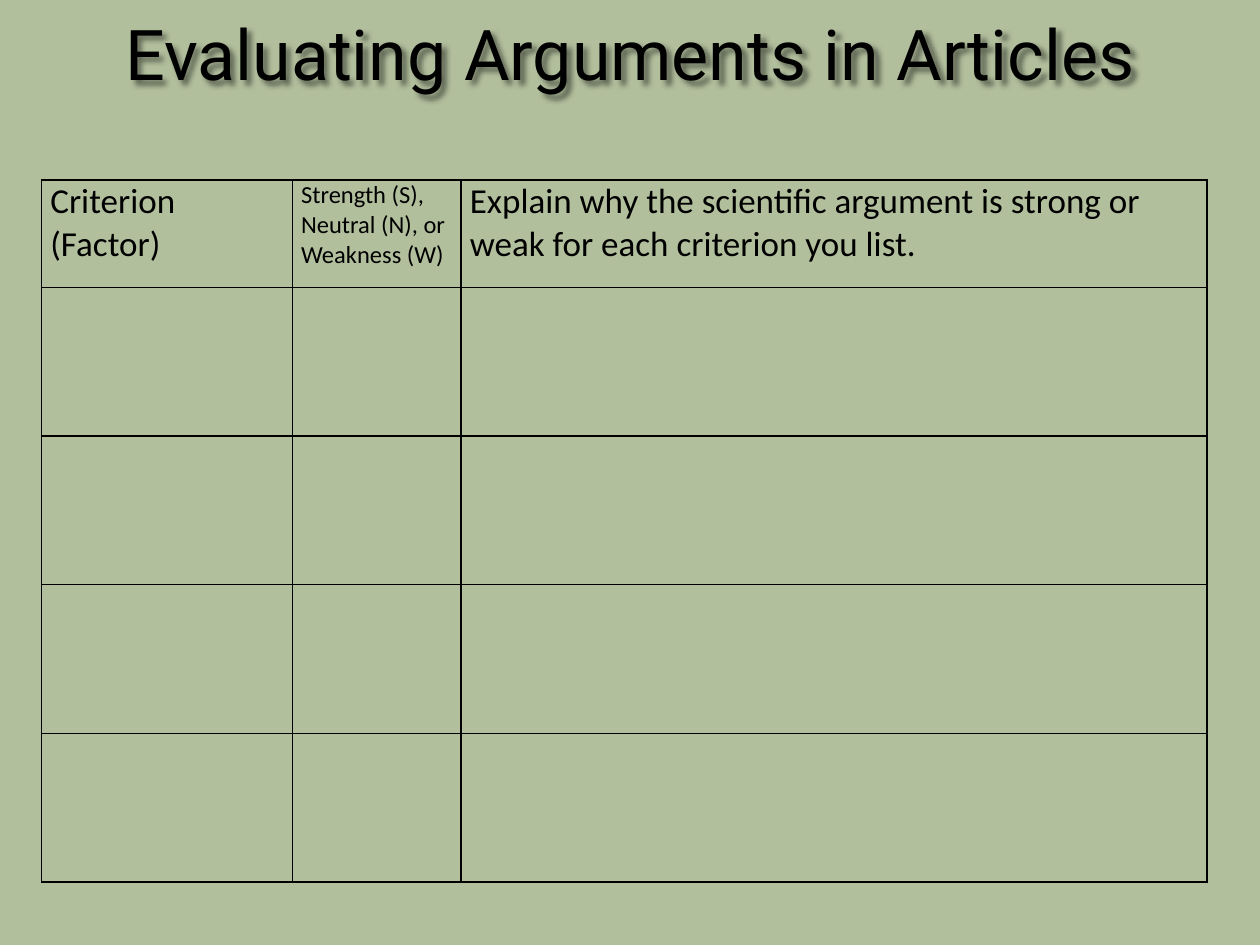
import pptx
import pptx.util
import pptx.dml.color
import pptx.enum.text
import pptx.oxml
import pptx.oxml.ns
from pptx.util import Inches

COLORS = {"background": "B2BF9D", "ink": "000000"}
TITLE = "Evaluating Arguments in Articles"
# Column width, header size in points, header paragraphs
COLUMNS = [
    (1.99, 20, ["Criterion (Factor)"]),
    (1.34, 14, ["Strength (S), Neutral (N), or", "Weakness (W)"]),
    (5.92, 20, ["Explain why the scientific argument is strong or weak for each criterion you list."]),
]
HEADER_HEIGHT = 0.85
BLANK_ROW_HEIGHTS = [1.18] * 4
TABLE_LEFT, TABLE_TOP = 0.33, 1.43


def rgb(name):
    return pptx.dml.color.RGBColor.from_string(COLORS[name])


def write_text(frame, paragraphs, font="Calibri", size=20, color="ink", align=None):
    for index, text in enumerate(paragraphs):
        paragraph = frame.paragraphs[0] if index == 0 else frame.add_paragraph()
        paragraph.alignment = align
        run = paragraph.add_run()
        run.text = text
        run.font.name = font
        run.font.size = pptx.util.Pt(size)
        run.font.color.rgb = rgb(color)


def add_soft_shadow(shape):
    """Give an unfilled shape a shadow, which falls on its text."""
    shape.shadow.inherit = False
    effects = shape._element.spPr.find(pptx.oxml.ns.qn("a:effectLst"))
    effects.append(pptx.oxml.parse_xml(
        f'<a:outerShdw {pptx.oxml.ns.nsdecls("a")} blurRad="38100" dist="38100" dir="2700000">'
        f'<a:srgbClr val="{COLORS["ink"]}"><a:alpha val="45000"/></a:srgbClr></a:outerShdw>'))


def add_borders(cell):
    properties = cell._tc.get_or_add_tcPr()
    for position, side in enumerate(("lnL", "lnR", "lnT", "lnB")):
        properties.insert(position, pptx.oxml.parse_xml(
            f'<a:{side} {pptx.oxml.ns.nsdecls("a")} w="{pptx.util.Pt(1)}">'
            f'<a:solidFill><a:srgbClr val="{COLORS["ink"]}"/></a:solidFill></a:{side}>'))


def add_title(slide):
    title = slide.shapes.title
    title.left, title.top, title.width, title.height = map(Inches, (0.25, 0, 9.5, 0.83))
    title.text_frame.vertical_anchor = pptx.enum.text.MSO_ANCHOR.MIDDLE
    write_text(title.text_frame, [TITLE], font="Roboto", size=40,
               align=pptx.enum.text.PP_ALIGN.CENTER)
    add_soft_shadow(title)


def add_criteria_table(slide):
    widths = [width for width, _, _ in COLUMNS]
    heights = [HEADER_HEIGHT, *BLANK_ROW_HEIGHTS]
    table = slide.shapes.add_table(
        len(heights), len(widths), Inches(TABLE_LEFT), Inches(TABLE_TOP),
        Inches(sum(widths)), Inches(sum(heights))).table
    table.first_row = table.horz_banding = False
    for row, height in zip(table.rows, heights):
        row.height = Inches(height)
    for column, width in zip(table.columns, widths):
        column.width = Inches(width)
    for cell in table.iter_cells():
        cell.margin_left = cell.margin_right = Inches(0.07)
        cell.margin_top = cell.margin_bottom = 0
        cell.fill.background()
        add_borders(cell)
    for cell, (_, size, paragraphs) in zip(table.rows[0].cells, COLUMNS):
        write_text(cell.text_frame, paragraphs, size=size)


def main():
    presentation = pptx.Presentation()
    presentation.slide_width, presentation.slide_height = Inches(10), Inches(7.5)
    slide = presentation.slides.add_slide(presentation.slide_layouts[5])
    slide.background.fill.solid()
    slide.background.fill.fore_color.rgb = rgb("background")
    add_criteria_table(slide)
    add_title(slide)
    presentation.save("out.pptx")


if __name__ == "__main__":
    main()
